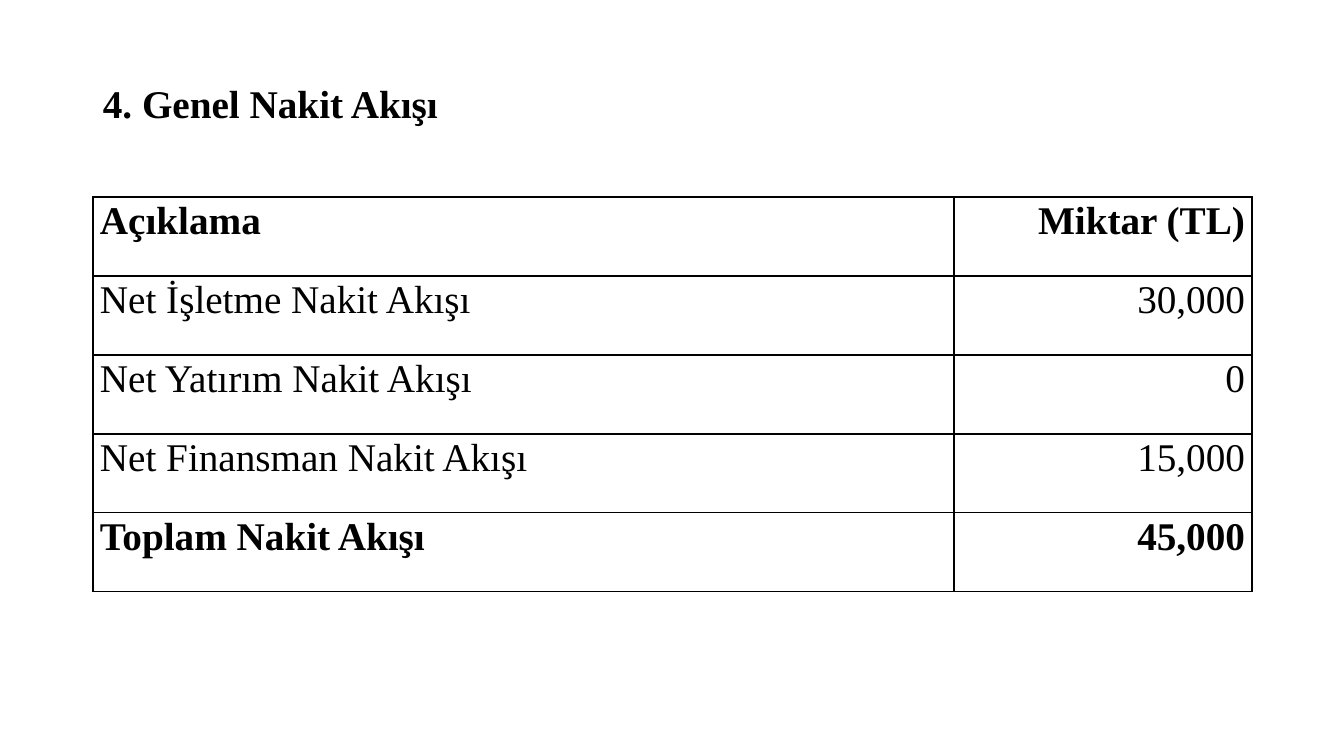
from typing import NamedTuple

from lxml.etree import SubElement
from pptx import Presentation
from pptx.dml.color import RGBColor
from pptx.enum.text import MSO_ANCHOR, MSO_AUTO_SIZE, PP_ALIGN
from pptx.oxml.ns import qn
from pptx.slide import Slide
from pptx.table import _Cell
from pptx.text.text import _Paragraph
from pptx.util import Emu, Pt

SCALE = 914400 / 100.8
INK = "000000"
LEFT, TOP, HIGH = 93, 197, 79
WIDTHS = (861, 298)
ALIGNS = (PP_ALIGN.JUSTIFY, PP_ALIGN.RIGHT)


class Item(NamedTuple):
    """One row of the cash flow table."""
    label: str
    amount: str
    bold: bool = False


ITEMS = (
    Item("Açıklama", "Miktar (TL)", True),
    Item("Net İşletme Nakit Akışı", "30,000"),
    Item("Net Yatırım Nakit Akışı", "0"),
    Item("Net Finansman Nakit Akışı", "15,000"),
    Item("Toplam Nakit Akışı", "45,000", True),
)


def px(size: int) -> Emu:
    """Turn pixels into EMU."""
    return Emu(round(size * SCALE))


def color(code: str) -> RGBColor:
    """Turn a hex string into a colour."""
    return RGBColor.from_string(code)


def write(para: _Paragraph, text: str, align: PP_ALIGN, bold: bool) -> None:
    """Fill a paragraph with styled text."""
    para.text = text
    para.alignment = align
    font = para.font
    font.name, font.size, font.bold = "Times New Roman", Pt(28), bold
    font.color.rgb = color(INK)


def frame(cell: _Cell) -> None:
    """Rule all four sides of a cell."""
    props = cell._tc.get_or_add_tcPr()
    for side in ("lnL", "lnR", "lnT", "lnB"):
        line = SubElement(props, qn(f"a:{side}"), w=str(Pt(1)))
        fill = SubElement(line, qn("a:solidFill"))
        SubElement(fill, qn("a:srgbClr"), val=INK)


def draw_cell(cell: _Cell, text: str, align: PP_ALIGN, bold: bool) -> None:
    """Style and fill one table cell."""
    frame(cell)
    cell.fill.background()
    cell.margin_left = cell.margin_right = px(7)
    cell.margin_top = cell.margin_bottom = 0
    para = cell.text_frame.paragraphs[0]
    write(para, text, align, bold)
    para.line_spacing = 1.07
    para.space_after = Pt(8)


def draw_table(slide: Slide) -> None:
    """Draw the cash flow table."""
    count = len(ITEMS)
    table = slide.shapes.add_table(
        count, len(WIDTHS), px(LEFT), px(TOP), px(sum(WIDTHS)), px(HIGH * count)
    ).table
    table.first_row = table.horz_banding = False
    for col, width in zip(table.columns, WIDTHS):
        col.width = px(width)
    for row, item in zip(table.rows, ITEMS):
        row.height = px(HIGH)
        texts = (item.label, item.amount)
        for cell, text, align in zip(row.cells, texts, ALIGNS):
            draw_cell(cell, text, align, item.bold)


def draw_title(slide: Slide) -> None:
    """Draw the heading above the table."""
    box = slide.shapes.add_textbox(px(LEFT), px(74), px(1204), px(57))
    body = box.text_frame
    body.word_wrap = True
    body.auto_size = MSO_AUTO_SIZE.SHAPE_TO_FIT_TEXT
    body.vertical_anchor = MSO_ANCHOR.MIDDLE
    write(body.paragraphs[0], "4. Genel Nakit Akışı", PP_ALIGN.JUSTIFY, True)


def main() -> None:
    """Build and save the slide."""
    deck = Presentation()
    deck.slide_width, deck.slide_height = px(1344), px(756)
    slide = deck.slides.add_slide(deck.slide_layouts[6])
    draw_table(slide)
    draw_title(slide)
    deck.save("out.pptx")


if __name__ == "__main__":
    main()
